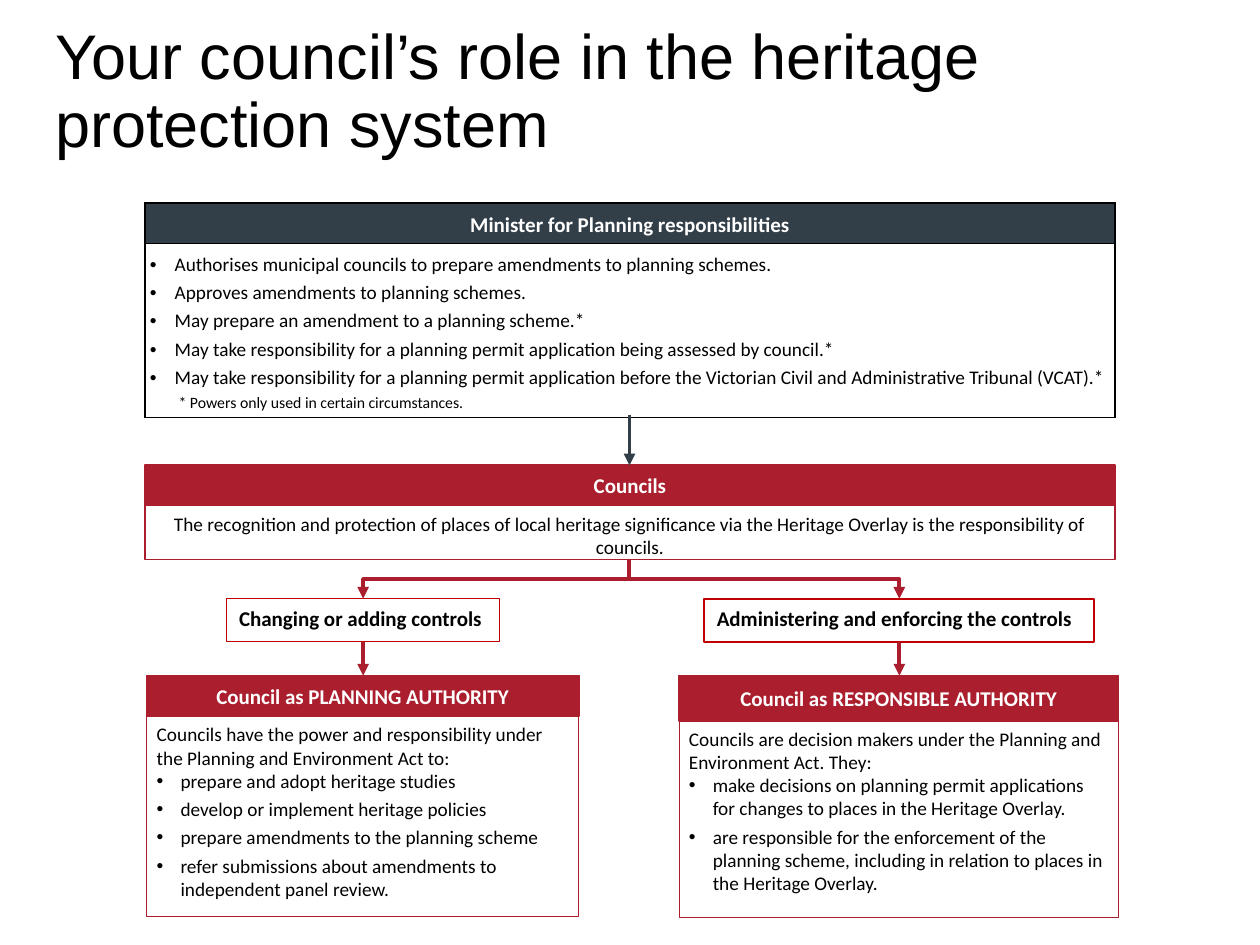
"""Build the slide on the council's role in the heritage protection system."""
from dataclasses import dataclass

from lxml import etree
from pptx import Presentation
from pptx.dml.color import RGBColor
from pptx.enum.shapes import MSO_CONNECTOR, MSO_SHAPE
from pptx.enum.text import MSO_ANCHOR, PP_ALIGN
from pptx.oxml.ns import qn
from pptx.util import Cm, Pt

RECT = MSO_SHAPE.RECTANGLE
STRAIGHT, ELBOW = MSO_CONNECTOR.STRAIGHT, MSO_CONNECTOR.ELBOW
TOP, MIDDLE = MSO_ANCHOR.TOP, MSO_ANCHOR.MIDDLE
LEFT, CENTER = PP_ALIGN.LEFT, PP_ALIGN.CENTER
COLORS = {"black": "000000", "white": "FFFFFF", "slate": "323E48",
          "red": "AA1E2E", "label": "C00000"}


@dataclass
class Para:
    text: str
    size: float = 11
    color: str = "black"
    bold: bool = False
    align: PP_ALIGN = LEFT
    after: float = 0
    spacing: float = 1.0
    indent: float = 0
    bullet: bool = False
    font: str = "Calibri"


@dataclass
class Box:
    x: float
    y: float
    w: float
    h: float
    fill: str
    line: str
    weight: float
    paras: list[Para]
    anchor: MSO_ANCHOR = TOP
    inset: float = 0.25


@dataclass
class Arrow:
    x1: float
    y1: float
    x2: float
    y2: float
    color: str = "red"


def rgb(name: str) -> RGBColor:
    return RGBColor.from_string(COLORS[name])


def write(tf, paras: list[Para]) -> None:
    for i, item in enumerate(paras):
        p = tf.paragraphs[0] if i == 0 else tf.add_paragraph()
        p.text = item.text
        p.alignment, p.line_spacing = item.align, item.spacing
        p.space_before, p.space_after = Pt(0), Pt(item.after)
        font = p.runs[0].font
        font.name, font.size, font.bold = item.font, Pt(item.size), item.bold
        font.color.rgb = rgb(item.color)
        props = p._p.get_or_add_pPr()
        props.set("marL", str(Cm(item.indent)))
        if item.bullet:
            props.set("indent", str(-Cm(item.indent)))
            etree.SubElement(props, qn("a:buFont")).set("typeface", "Arial")
            etree.SubElement(props, qn("a:buChar")).set("char", "•")


def draw_box(shapes, box: Box) -> None:
    s = shapes.add_shape(RECT, Cm(box.x), Cm(box.y), Cm(box.w), Cm(box.h))
    s.shadow.inherit = False
    s.fill.solid()
    s.fill.fore_color.rgb = rgb(box.fill)
    s.line.color.rgb = rgb(box.line)
    s.line.width = Pt(box.weight)
    tf = s.text_frame
    tf.word_wrap, tf.vertical_anchor = True, box.anchor
    tf.margin_left = tf.margin_right = Cm(box.inset)
    tf.margin_top = tf.margin_bottom = Cm(0.13)
    write(tf, box.paras)


def draw_panel(shapes, x: float, y: float, w: float, head_h: float, body_h: float,
               title: str, paras: list[Para], weight: float) -> None:
    group = shapes.add_group_shape()
    draw_box(group.shapes, Box(x, y + head_h, w, body_h, "white", "red", weight, paras, inset=0.2))
    head = Para(title, 12, "white", True, CENTER, 8)
    draw_box(group.shapes, Box(x, y, w, head_h, "red", "red", 1, [head], MIDDLE))


def draw_arrow(shapes, a: Arrow) -> None:
    if a.x1 == a.x2:
        s = shapes.add_connector(STRAIGHT, Cm(a.x1), Cm(a.y1), Cm(a.x2), Cm(a.y2))
    else:
        cx, cy = (a.x1 + a.x2) / 2, (a.y1 + a.y2) / 2
        half_h = abs(a.x2 - a.x1) / 2
        half_w = (a.y2 - a.y1) / 2
        if a.x2 > a.x1:
            half_w = -half_w
        s = shapes.add_connector(ELBOW, Cm(cx - half_w), Cm(cy - half_h),
                                 Cm(cx + half_w), Cm(cy + half_h))
        turn = 270 if a.x2 > a.x1 else 90
        s._element.spPr.find(qn("a:xfrm")).set("rot", str(turn * 60000))
    s.line.color.rgb = rgb(a.color)
    s.line.width = Pt(2.25)
    etree.SubElement(s.line._get_or_add_ln(), qn("a:tailEnd")).set("type", "triangle")
    etree.SubElement(s._element.spPr, qn("a:effectLst"))


def format_cell(cell, fill: str, anchor: MSO_ANCHOR, paras: list[Para]) -> None:
    cell.margin_left = cell.margin_right = Cm(0.1)
    cell.margin_top = cell.margin_bottom = Cm(0.1)
    cell.vertical_anchor = anchor
    write(cell.text_frame, paras)
    props = cell._tc.get_or_add_tcPr()
    for side in ("a:lnL", "a:lnR", "a:lnT", "a:lnB"):
        ln = etree.SubElement(props, qn(side), w=str(Pt(1)))
        solid = etree.SubElement(ln, qn("a:solidFill"))
        etree.SubElement(solid, qn("a:srgbClr")).set("val", COLORS["black"])
    cell.fill.solid()
    cell.fill.fore_color.rgb = rgb(fill)


def draw_minister_table(shapes) -> None:
    table = shapes.add_table(2, 1, Cm(2.92), Cm(4.09), Cm(19.56), Cm(4.22)).table
    table.rows[0].height, table.rows[1].height = Cm(0.71), Cm(3.51)
    head = Para("Minister for Planning responsibilities", 12, "white", True, CENTER, 6, 1.19)
    duties = [
        "Authorises municipal councils to prepare amendments to planning schemes.",
        "Approves amendments to planning schemes.",
        "May prepare an amendment to a planning scheme.*",
        "May take responsibility for a planning permit application being assessed by council.*",
        "May take responsibility for a planning permit application before the "
        "Victorian Civil and Administrative Tribunal (VCAT).*",
    ]
    body = [Para(d, spacing=1.19, indent=0.5, bullet=True) for d in duties]
    body.append(Para("* Powers only used in certain circumstances.", 9, spacing=1.19, indent=0.58))
    format_cell(table.cell(0, 0), "slate", MIDDLE, [head])
    format_cell(table.cell(1, 0), "white", TOP, body)


def authority_text(intro: str, points: list[str]) -> list[Para]:
    return [Para(intro)] + [Para(t, after=3, indent=0.48, bullet=True) for t in points]


def main() -> None:
    prs = Presentation()
    prs.slide_width, prs.slide_height = Cm(25.4), Cm(19.05)
    slide = prs.slides.add_slide(prs.slide_layouts[5])
    shapes = slide.shapes
    title = shapes.title
    title.left, title.top, title.width, title.height = Cm(0.86), Cm(0.1), Cm(24.54), Cm(3.56)
    title.text_frame.vertical_anchor = MIDDLE
    write(title.text_frame, [Para("Your council’s role in the heritage protection system",
                                  36, spacing=0.9, font="Arial")])

    draw_panel(shapes, 2.92, 9.38, 19.56, 0.81, 1.09, "Councils", [Para(
        "The recognition and protection of places of local heritage significance via "
        "the Heritage Overlay is the responsibility of councils.", align=CENTER, after=8)], 1)
    draw_minister_table(shapes)
    draw_panel(shapes, 2.96, 13.62, 8.71, 0.82, 4.04, "Council as PLANNING AUTHORITY", authority_text(
        "Councils have the power and responsibility under the Planning and Environment Act to:",
        ["prepare and adopt heritage studies",
         "develop or implement heritage policies",
         "prepare amendments to the planning scheme",
         "refer submissions about amendments to independent panel review."]), 0.5)
    draw_panel(shapes, 13.69, 13.62, 8.86, 0.91, 3.96, "Council as RESPONSIBLE AUTHORITY", authority_text(
        "Councils are decision makers under the Planning and Environment Act. They:",
        ["make decisions on planning permit applications for changes to places in the Heritage Overlay.",
         "are responsible for the enforcement of the planning scheme, including in relation "
         "to places in the Heritage Overlay."]), 0.5)

    for x, w, weight, text in [(4.57, 5.51, 0.5, "Changing or adding controls"),
                               (14.2, 7.85, 1, "Administering and enforcing the controls")]:
        label = Para(text, 12, bold=True, after=8)
        draw_box(shapes, Box(x, 12.07, w, 0.87, "white", "label", weight, [label]))

    draw_arrow(shapes, Arrow(12.69, 8.36, 12.69, 9.38, "slate"))
    for x in (7.32, 18.13):
        draw_arrow(shapes, Arrow(12.68, 11.28, x, 12.07))
        draw_arrow(shapes, Arrow(x, 12.94, x, 13.62))
    prs.save("out.pptx")


if __name__ == "__main__":
    main()
